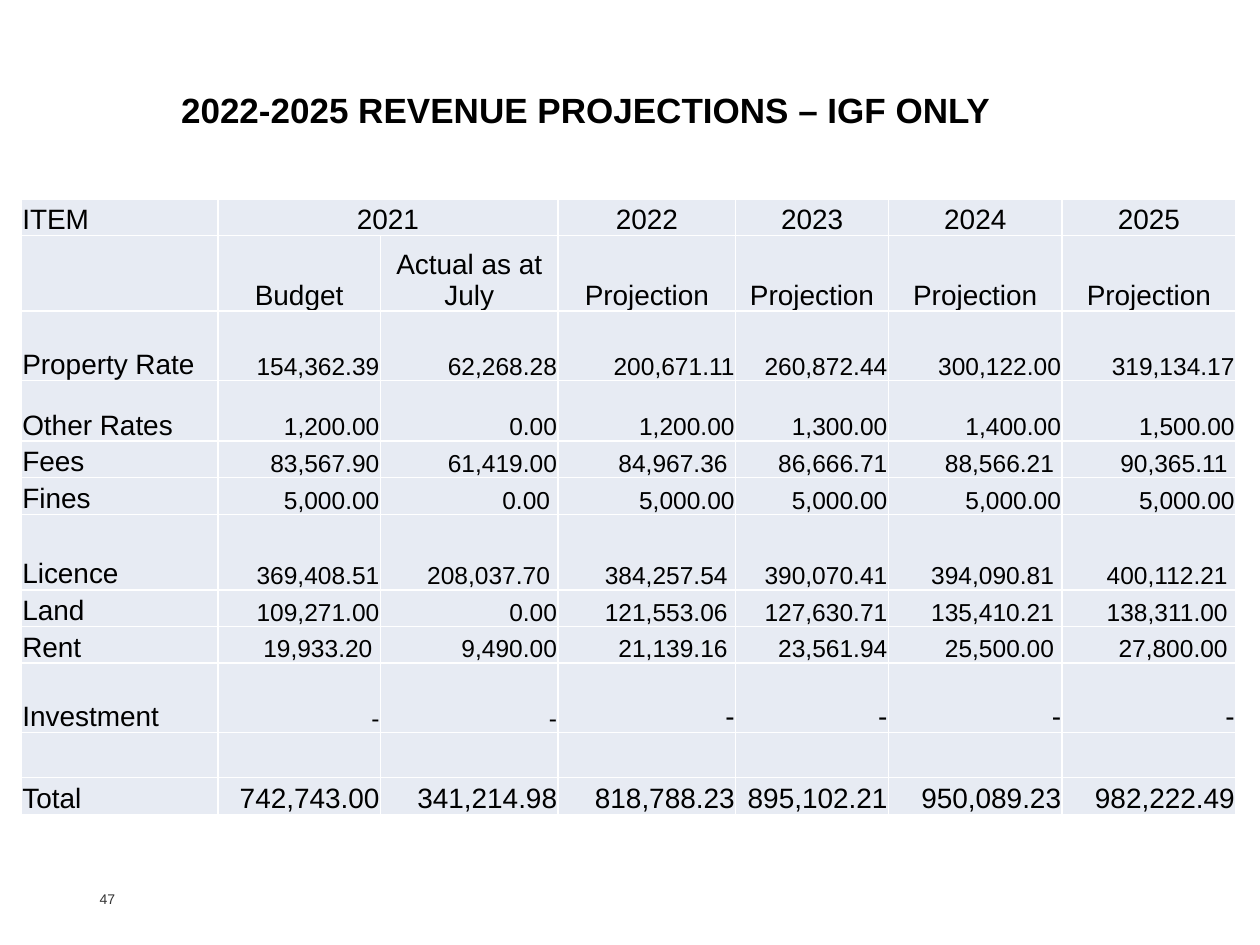
"""Build the slide with the 2022-2025 revenue projection table."""
from lxml.etree import SubElement
from pptx import Presentation
from pptx.dml.color import RGBColor
from pptx.enum.text import MSO_ANCHOR as Anchor, PP_ALIGN as Align
from pptx.oxml.ns import qn
from pptx.util import Cm, Pt

COLORS = {"text": "000000", "number": "333333", "cell": "E7EBF3", "border": "FFFFFF"}
COLUMN_WIDTHS = [3.96, 3.28, 3.58, 3.58, 3.08, 3.5, 3.5]
ROW_HEIGHTS = [0.74, 1.52, 1.4, 1.22, 0.74, 0.74, 1.52, 0.74, 0.74, 1.4, 0.91, 0.74]
ROWS = [
    ["ITEM", "2021", "", "2022", "2023", "2024", "2025"],
    ["", "Budget", "Actual as at July"] + ["Projection"] * 4,
    ["Property Rate", "154,362.39", "62,268.28", "200,671.11", "260,872.44", "300,122.00", "319,134.17"],
    ["Other Rates", "1,200.00", "0.00", "1,200.00", "1,300.00", "1,400.00", "1,500.00"],
    ["Fees", "83,567.90", "61,419.00", "84,967.36", "86,666.71", "88,566.21", "90,365.11"],
    ["Fines", "5,000.00", "0.00"] + ["5,000.00"] * 4,
    ["Licence", "369,408.51", "208,037.70", "384,257.54", "390,070.41", "394,090.81", "400,112.21"],
    ["Land", "109,271.00", "0.00", "121,553.06", "127,630.71", "135,410.21", "138,311.00"],
    ["Rent", "19,933.20", "9,490.00", "21,139.16", "23,561.94", "25,500.00", "27,800.00"],
    ["Investment"] + ["-"] * 6,
    [""] * 7,
    ["Total", "742,743.00", "341,214.98", "818,788.23", "895,102.21", "950,089.23", "982,222.49"],
]
HEADER_ROWS = 2
INVESTMENT_ROW = 9
PADDED_CELLS = {(row, column) for row in (4, 6, 7, 8) for column in (3, 5, 6)}
PADDED_CELLS |= {(5, 2), (6, 2), (8, 1)}


def style_paragraph(para, size, color, align=Align.LEFT, bold=False):
    para.alignment = align
    para.font.name = "Arial"
    para.font.size = Pt(size)
    para.font.bold = bold
    para.font.color.rgb = RGBColor.from_string(COLORS[color])


def add_borders(cell):
    properties = cell._tc.get_or_add_tcPr()
    for side in ("a:lnL", "a:lnR", "a:lnT", "a:lnB"):
        line = SubElement(properties, qn(side), w=str(Pt(1)))
        fill = SubElement(line, qn("a:solidFill"))
        SubElement(fill, qn("a:srgbClr"), val=COLORS["border"])


deck = Presentation()
deck.slide_width, deck.slide_height = Cm(25.4), Cm(19.05)
page = deck.slides.add_slide(deck.slide_layouts[6])

number_box = page.shapes.add_textbox(Cm(2.01), Cm(17.96), Cm(1.14), Cm(0.51))
number_frame = number_box.text_frame
number_frame.word_wrap = True
number_frame.margin_left = number_frame.margin_right = 0
number_frame.margin_top = number_frame.margin_bottom = 0
number_frame.text = "47"
style_paragraph(number_frame.paragraphs[0], 8, "number")

title_box = page.shapes.add_textbox(Cm(1.22), Cm(1.6), Cm(21.18), Cm(1.88))
title_frame = title_box.text_frame
title_frame.word_wrap = True
title_frame.margin_top = Cm(0.18)
title_frame.text = "2022-2025 REVENUE PROJECTIONS – IGF ONLY"
style_paragraph(title_frame.paragraphs[0], 20, "text", Align.CENTER, True)

table = page.shapes.add_table(
    len(ROWS), len(COLUMN_WIDTHS), Cm(0.43), Cm(4.01),
    Cm(sum(COLUMN_WIDTHS)), Cm(sum(ROW_HEIGHTS)),
).table
for column, width in zip(table.columns, COLUMN_WIDTHS):
    column.width = Cm(width)
for row, height in zip(table.rows, ROW_HEIGHTS):
    row.height = Cm(height)

for row_index, row in enumerate(ROWS):
    for column_index, text in enumerate(row):
        cell = table.cell(row_index, column_index)
        add_borders(cell)
        cell.fill.solid()
        cell.fill.fore_color.rgb = RGBColor.from_string(COLORS["cell"])
        cell.vertical_anchor = Anchor.BOTTOM
        cell.margin_left = cell.margin_top = Cm(0.02)
        cell.margin_right = Cm(0.16 if (row_index, column_index) in PADDED_CELLS else 0.02)
        cell.margin_bottom = 0
        cell.text = text

        if column_index == 0:
            align = Align.LEFT
        elif row_index < HEADER_ROWS:
            align = Align.CENTER
        else:
            align = Align.RIGHT
        is_amount = column_index > 0 and HEADER_ROWS <= row_index <= INVESTMENT_ROW
        is_large_dash = row_index == INVESTMENT_ROW and column_index > 2
        size = 14 if is_amount and not is_large_dash else 16
        style_paragraph(cell.text_frame.paragraphs[0], size, "text", align)

table.cell(0, 1).merge(table.cell(0, 2))

deck.save("out.pptx")
